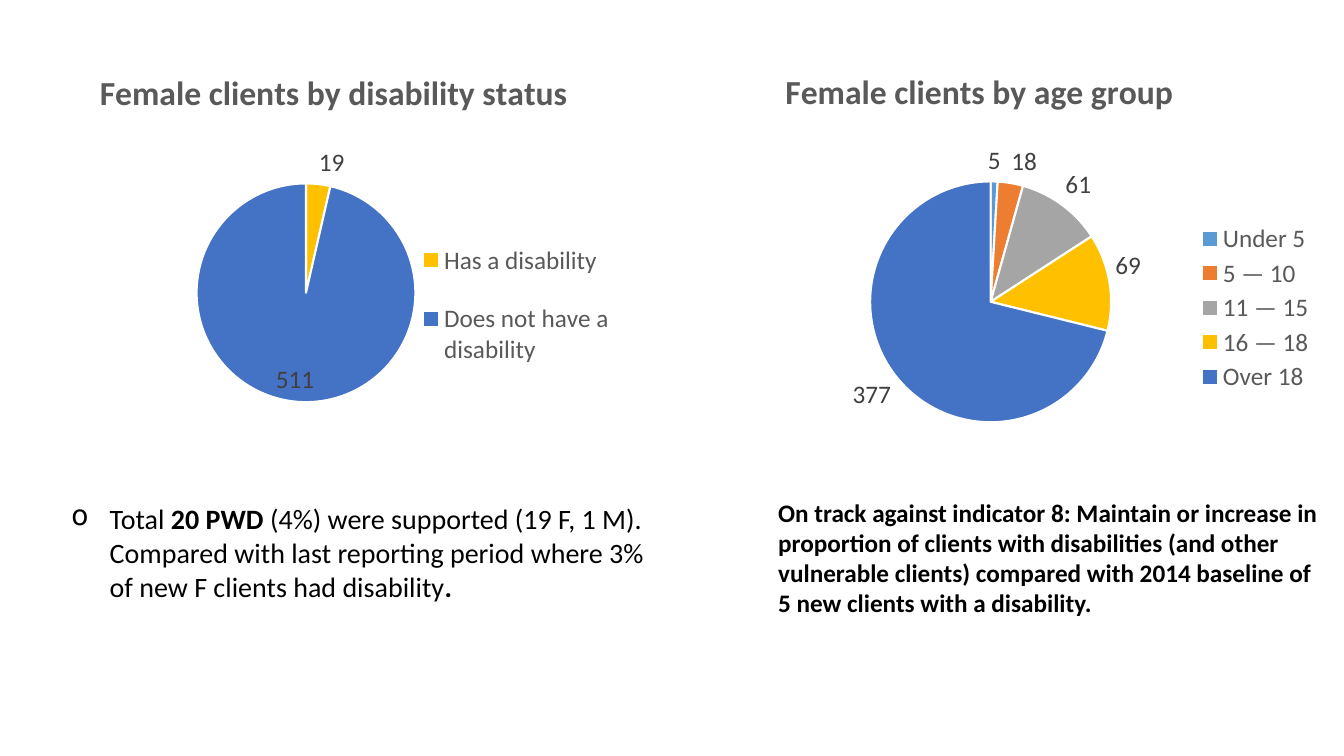
from lxml import etree
from pptx import Presentation
from pptx.chart.data import CategoryChartData
from pptx.dml.color import RGBColor
from pptx.enum.chart import XL_CHART_TYPE, XL_LABEL_POSITION, XL_LEGEND_POSITION
from pptx.enum.text import MSO_AUTO_SIZE
from pptx.oxml.ns import qn
from pptx.util import Inches, Pt

PIE = XL_CHART_TYPE.PIE
BEST_FIT = XL_LABEL_POSITION.BEST_FIT
OUTSIDE_END = XL_LABEL_POSITION.OUTSIDE_END
LEGEND_BOTTOM = XL_LEGEND_POSITION.BOTTOM
GROW = MSO_AUTO_SIZE.SHAPE_TO_FIT_TEXT
FONT = "Calibri"
COLORS = {
    "black": "000000", "white": "FFFFFF", "gray_text": "595959", "label": "404040",
    "light_blue": "5B9BD5", "orange": "ED7D31", "gray": "A5A5A5",
    "yellow": "FFC000", "blue": "4472C4",
}


def style_font(font, size, color, bold=False):
    font.name = FONT
    font.size = Pt(size)
    font.bold = bold
    font.color.rgb = RGBColor.from_string(COLORS[color])


def place_part(part, index, frame, box, inner=False):
    """Place a chart part at a slide position in inches: left, top[, width, height]."""
    layout = part.find(qn("c:layout"))
    if layout is None:
        layout = etree.Element(qn("c:layout"))
        part.insert(index, layout)
    manual = etree.SubElement(layout, qn("c:manualLayout"))
    left, top, width, height = frame
    fractions = [(box[0] - left) / width, (box[1] - top) / height]
    if len(box) == 4:
        fractions += [box[2] / width, box[3] / height]
    settings = [("layoutTarget", "inner")] if inner else []
    settings += [("xMode", "edge"), ("yMode", "edge")]
    settings += [(key, f"{value:.4f}") for key, value in zip("xywh", fractions)]
    for key, value in settings:
        etree.SubElement(manual, qn(f"c:{key}")).set("val", value)


presentation = Presentation()
presentation.slide_width = Inches(13.33)
presentation.slide_height = Inches(7.5)
slide = presentation.slides.add_slide(presentation.slide_layouts[6])

# Pie charts
pies = [
    {
        "title": "Female clients by age group",
        "frame": (6.47, 0.55, 6.73, 4.35),
        "title_at": (7.73, 0.62),
        "plot": (8.63, 1.8, 2.39, 2.39),
        "legend": (11.8, 2.18, 1.3, 1.75),
        "slices": [("Under 5", 5, "light_blue"), ("5 — 10", 18, "orange"),
                   ("11 — 15", 61, "gray"), ("16 — 18", 69, "yellow"),
                   ("Over 18", 377, "blue")],
        "labels": OUTSIDE_END,
    },
    {
        "title": "Female clients by disability status",
        "frame": (-0.4, 0.57, 6.87, 4.35),
        "title_at": (0.93, 0.63),
        "plot": (1.95, 1.82, 2.17, 2.17),
        "legend": (4.17, 2.15, 1.9, 1.75),
        "slices": [("Has a disability", 19, "yellow"),
                   ("Does not have a disability", 511, "blue")],
        "labels": BEST_FIT,
    },
]
for pie in pies:
    frame = pie["frame"]
    names, values, slice_colors = zip(*pie["slices"])
    chart_data = CategoryChartData()
    chart_data.categories = names
    chart_data.add_series("Series 1", values)
    chart = slide.shapes.add_chart(PIE, *map(Inches, frame), chart_data).chart
    style_font(chart.font, 10, "black")

    chart.has_title = True
    title_paragraph = chart.chart_title.text_frame.paragraphs[0]
    title_paragraph.text = pie["title"]
    style_font(title_paragraph.font, 24, "gray_text", bold=True)
    chart.has_legend = True
    chart.legend.position = LEGEND_BOTTOM
    chart.legend.include_in_layout = False
    style_font(chart.legend.font, 18, "gray_text")

    plot = chart.plots[0]
    plot.vary_by_categories = True
    for index, color in enumerate(slice_colors):
        point_format = plot.series[0].points[index].format
        point_format.fill.solid()
        point_format.fill.fore_color.rgb = RGBColor.from_string(COLORS[color])
        point_format.line.color.rgb = RGBColor.from_string(COLORS["white"])
        point_format.line.width = Pt(1.5)
    labels = plot.series[0].data_labels
    labels.show_value = True
    labels.position = pie["labels"]
    style_font(labels.font, 18, "label")

    chart_element = chart.element.find(qn("c:chart"))
    place_part(chart_element.find(qn("c:title")), 1, frame, pie["title_at"])
    place_part(chart_element.find(qn("c:plotArea")), 0, frame, pie["plot"], inner=True)
    place_part(chart_element.find(qn("c:legend")), 1, frame, pie["legend"])

# Notes below the charts: box, size, bulleted, runs as (text, bold)
notes = [
    ((0.61, 4.93, 6.06, 1.11), 20, True, [
        ("Total ", False), ("20 PWD ", True),
        ("(4%) were supported (19 F, 1 M). Compared with last reporting period "
         "where 3% of new F clients had disability", False),
        (".", True)]),
    ((7.62, 4.88, 5.57, 1.31), 18, False, [
        ("On track against indicator 8: Maintain or increase in proportion of clients "
         "with disabilities (and other vulnerable clients) compared with 2014 baseline "
         "of 5 new clients with a disability.", True)]),
]
for box, size, bulleted, runs in notes:
    text_frame = slide.shapes.add_textbox(*map(Inches, box)).text_frame
    text_frame.word_wrap = True
    text_frame.auto_size = GROW
    paragraph = text_frame.paragraphs[0]
    paragraph.space_before = Pt(12)
    for text, bold in runs:
        run = paragraph.add_run()
        run.text = text
        style_font(run.font, size, "black", bold)
    if bulleted:
        properties = paragraph._p.get_or_add_pPr()
        properties.set("marL", str(Inches(0.38)))
        properties.set("indent", str(Inches(-0.38)))
        etree.SubElement(properties, qn("a:buChar")).set("char", "o")

presentation.save("out.pptx")
